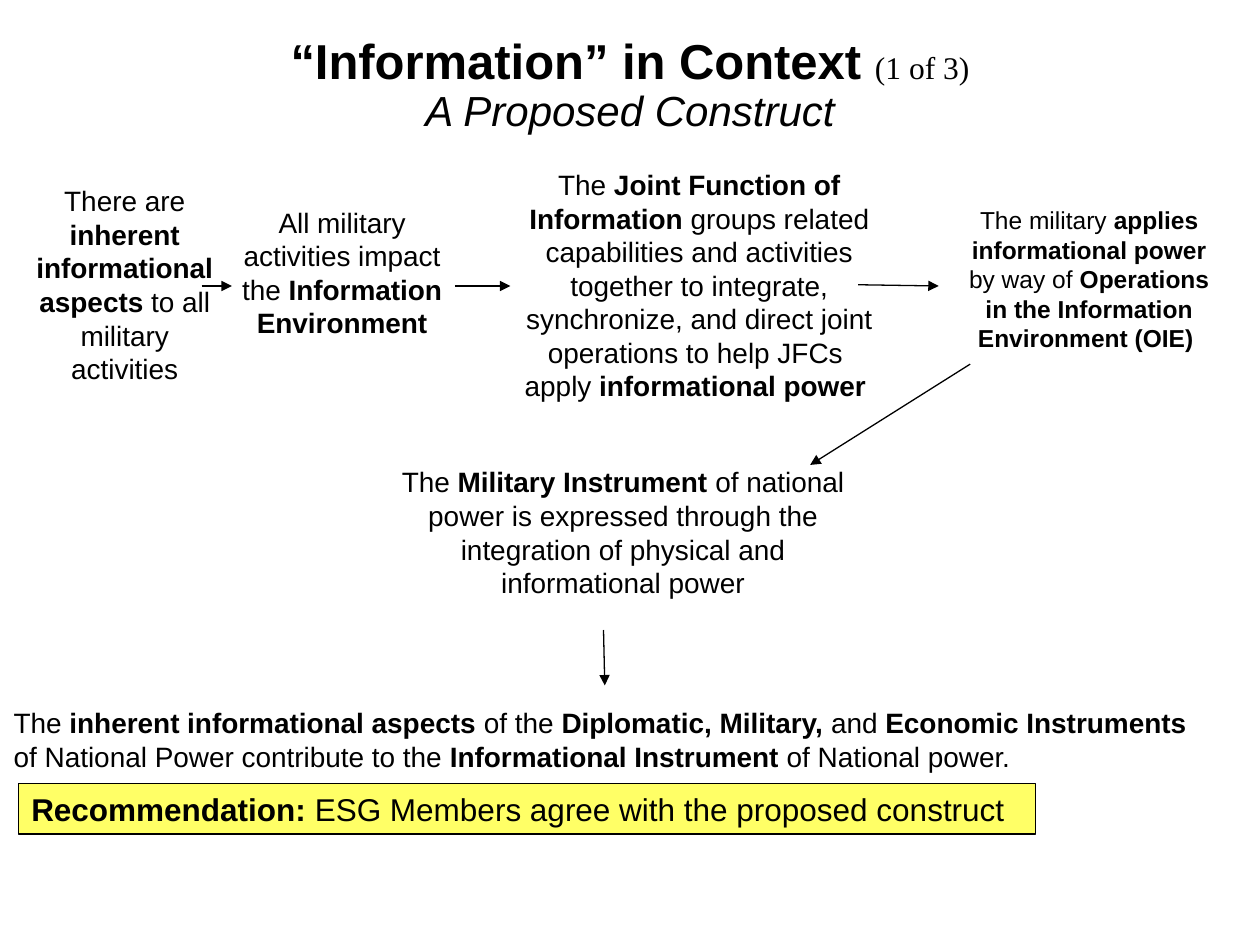
from collections import namedtuple
from lxml.etree import SubElement as Sub
from pptx import Presentation
from pptx.dml.color import RGBColor
from pptx.enum.shapes import MSO_CONNECTOR as Link, MSO_SHAPE as Form
from pptx.enum.text import MSO_ANCHOR as Anchor, PP_ALIGN as Align
from pptx.oxml.ns import qn
from pptx.util import Inches, Pt

WIDE, HIGH = 10, 7.5
COLS, ROWS = 100, 75
INK, GOLD = "000000", "FFFF66"
Box = namedtuple("Box", "x y w h")


def tint(code):
    """Turn a hex string into a colour."""
    return RGBColor.from_string(code)


def spot(x, y):
    """Turn a grid column and row into slide lengths."""
    return Inches(x * WIDE / COLS), Inches(y * HIGH / ROWS)


def inner(box, x, y, w, h):
    """Give a box whose place is relative to its parent."""
    return Box(box.x + x, box.y + y, w, h)


def add_run(para, text, size, bold=False, italic=False, font="Arial"):
    """Add one styled run to a paragraph."""
    run = para.add_run()
    run.text = text
    face = run.font
    face.name, face.size = font, Pt(size)
    face.bold, face.italic = bold, italic
    face.color.rgb = tint(INK)


def add_mix(para, parts, size, bold=False):
    """Add runs that switch between plain and bold."""
    for part in parts:
        add_run(para, part, size, bold)
        bold = not bold


def add_text(slide, box, paras, size=16, align=Align.CENTER):
    """Add a wrapped text box of mixed paragraphs."""
    frame = slide.shapes.add_textbox(*spot(box.x, box.y), *spot(box.w, box.h)).text_frame
    frame.word_wrap = True
    for i, parts in enumerate(paras):
        para = frame.add_paragraph() if i else frame.paragraphs[0]
        para.alignment = align
        add_mix(para, parts, size)
    return frame


def add_arrow(slide, box, x1, y1, x2, y2):
    """Draw an arrow between two points of a box."""
    line = slide.shapes.add_connector(
        Link.STRAIGHT, *spot(box.x + x1, box.y + y1), *spot(box.x + x2, box.y + y2))
    line.line.color.rgb = tint(INK)
    line.line.width = Pt(0.75)
    Sub(line.line._get_or_add_ln(), qn("a:tailEnd"), type="triangle")
    Sub(line._element.spPr, qn("a:effectLst"))


def add_title(slide, box):
    """Place the heading and its subtitle."""
    frame = add_text(slide, box, [[]])
    frame.vertical_anchor = Anchor.MIDDLE
    para = frame.paragraphs[0]
    para.line_spacing = 0.9
    add_run(para, "“Information” in Context ", 28, bold=True)
    add_run(para, "(1 of 3)", 18, font="Times New Roman")
    para.add_line_break()
    add_run(para, "A Proposed Construct", 24, italic=True)


def add_flow(slide, box):
    """Place the chain of statements and the arrows between them."""
    steps = [
        ((0, 1.3, 16.8, 17.2), 16, [
            ["There are ", "inherent informational aspects", " to all military activities"]]),
        ((15.4, 3, 20.5, 11.8), 16, [
            ["All military activities impact the ", "Information Environment"]]),
        ((39, 0, 30, 19.9), 16, [
            ["The ", "Joint Function of Information ",
             "groups related capabilities and activities together to integrate, "
             "synchronize, and direct joint operations to help JFCs "],
            ["apply ", "informational power "]]),
        ((74.1, 3, 21.7, 12.8), 14, [
            ["The military ", "applies informational power ", "by way of ",
             "Operations in the Information Environment (OIE) "]]),
        ((29.3, 23.6, 37.3, 11.8), 16, [
            ["The ", "Military Instrument ",
             "of national power is expressed through the integration of "
             "physical and informational power"]]),
    ]
    for place, size, paras in steps:
        add_text(slide, inner(box, *place), paras, size)
    mid = 9.9
    for ends in [(14.5, mid, 16.9, mid), (34.6, mid, 39, mid), (66.6, 9.8, 73, mid),
                 (75.5, 16.1, 62.8, 24.1), (46.4, 37.2, 46.5, 41.6)]:
        add_arrow(slide, box, *ends)


def add_close(slide, box):
    """Place the summary and the recommendation bar."""
    frame = add_text(slide, inner(box, 0, 0, box.w, 6.4), [
        ["The", " inherent informational aspects ", "of the ",
         "Diplomatic, Military, ", "and", " Economic Instruments ",
         "of National Power contribute to the ", "Informational Instrument ",
         "of National power."]], align=Align.LEFT)
    frame.paragraphs[0].space_before = Pt(4.5)
    bar = inner(box, 1.4, 6.7, 80.7, 4)
    shape = slide.shapes.add_shape(Form.RECTANGLE, *spot(bar.x, bar.y), *spot(bar.w, bar.h))
    shape.shadow.inherit = False
    shape.fill.solid()
    shape.fill.fore_color.rgb = tint(GOLD)
    shape.line.color.rgb = tint(INK)
    shape.line.width = Pt(0.75)
    shape.text_frame.word_wrap = True
    para = shape.text_frame.paragraphs[0]
    para.alignment = Align.LEFT
    add_mix(para, ["Recommendation: ", "ESG Members agree with the proposed construct"],
            18, bold=True)


def main():
    """Build the slide and save it."""
    deck = Presentation()
    deck.slide_width, deck.slide_height = spot(COLS, ROWS)
    slide = deck.slides.add_slide(deck.slide_layouts[6])
    add_title(slide, Box(0, 2.1, COLS, 9.5))
    add_flow(slide, Box(1.5, 12.8, 95.8, 41.6))
    add_close(slide, Box(0.1, 55.5, 95.8, 10.7))
    deck.save("out.pptx")


if __name__ == "__main__":
    main()
